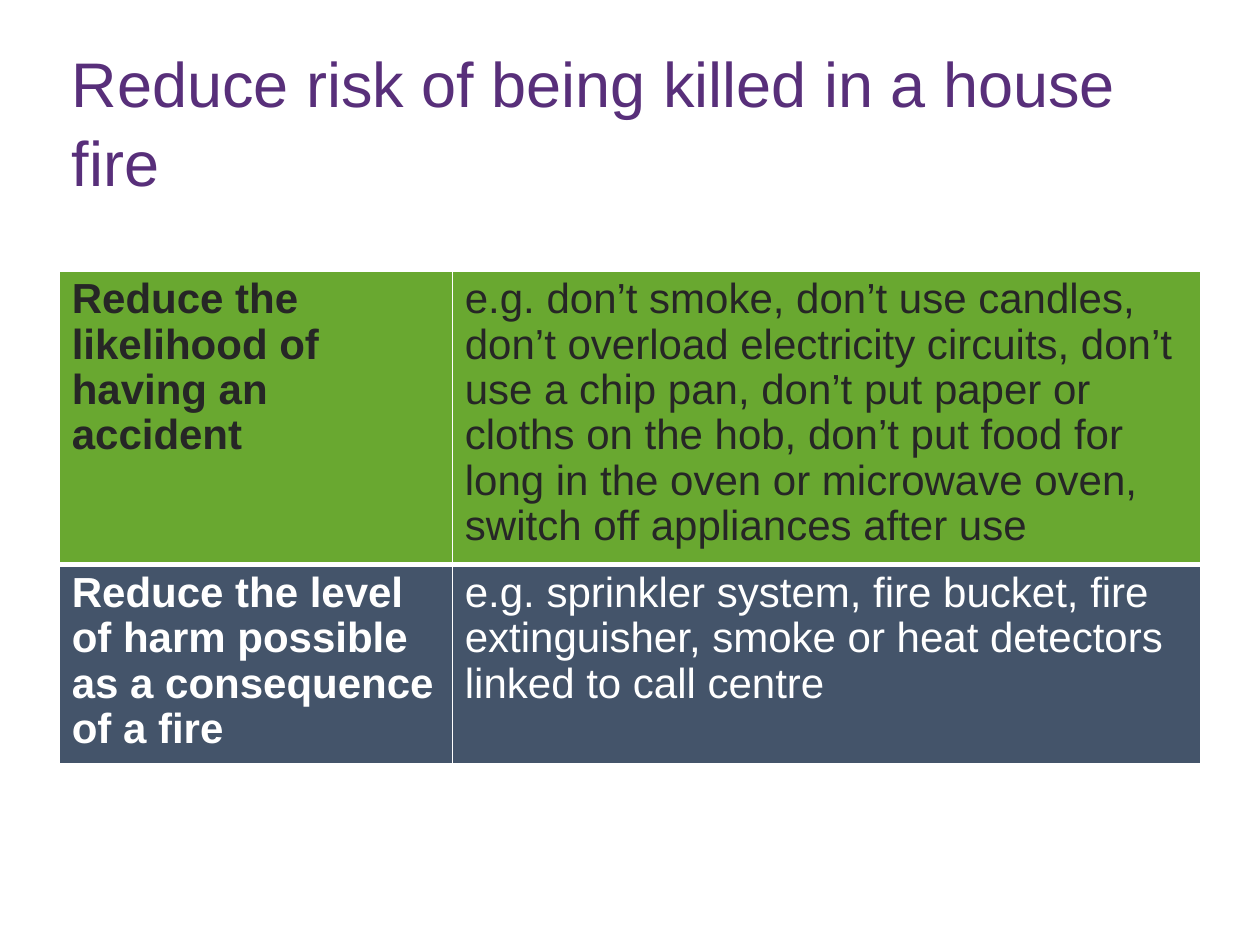
import pptx
import pptx.dml.color
import pptx.enum.text
import pptx.oxml.ns
import pptx.util
from lxml import etree

Inches, Pt = pptx.util.Inches, pptx.util.Pt
Color = pptx.dml.color.RGBColor.from_string

# Content: label, examples, fill, text colour, row height
TITLE = "Reduce risk of being killed in a house fire"
ROWS = [
    ("Reduce the likelihood of having an accident",
     "e.g. don’t smoke, don’t use candles, don’t overload electricity circuits, "
     "don’t use a chip pan, don’t put paper or cloths on the hob, don’t put food "
     "for long in the oven or microwave oven, switch off appliances after use",
     "green", "dark", 2.33),
    ("Reduce the level of harm possible as a consequence of a fire",
     "e.g. sprinkler system, fire bucket, fire extinguisher, smoke or heat "
     "detectors linked to call centre",
     "slate", "white", 1.58),
]
COLUMNS = [3.12, 5.94]
LEFT, WIDTH = 0.47, sum(COLUMNS)

THEME = {
    "font": "Arial", "title_size": 36, "cell_size": 24,
    "title_spacing": 1.05, "cell_spacing": 0.97,
    "purple": "582F7A", "green": "69A830", "slate": "44546A",
    "dark": "262626", "white": "FFFFFF",
}


def style(para, size, color, spacing, bold=False):
    para.line_spacing = spacing
    para.font.name = THEME["font"]
    para.font.size = Pt(size)
    para.font.bold = bold
    para.font.color.rgb = Color(THEME[color])


def add_borders(cell, widths):
    """Draw white cell borders; they must precede the fill in tcPr."""
    properties = cell._tc.get_or_add_tcPr()
    for index, (side, width) in enumerate(widths.items()):
        line = etree.Element(pptx.oxml.ns.qn(f"a:ln{side}"), w=str(Pt(width)))
        fill = etree.SubElement(line, pptx.oxml.ns.qn("a:solidFill"))
        etree.SubElement(fill, pptx.oxml.ns.qn("a:srgbClr"), val=THEME["white"])
        properties.insert(index, line)


deck = pptx.Presentation()
deck.slide_width, deck.slide_height = Inches(10), Inches(7.5)
page = deck.slides.add_slide(deck.slide_layouts[5])

# Title
title = page.shapes.title
title.left, title.top = Inches(LEFT), Inches(0.4)
title.width, title.height = Inches(WIDTH), Inches(1.1)
title.text_frame.text = TITLE
title.text_frame.vertical_anchor = pptx.enum.text.MSO_ANCHOR.MIDDLE
heading = title.text_frame.paragraphs[0]
heading.alignment = pptx.enum.text.PP_ALIGN.LEFT
style(heading, THEME["title_size"], "purple", THEME["title_spacing"])

# Table
table = page.shapes.add_table(
    len(ROWS), len(COLUMNS), Inches(LEFT), Inches(2.15),
    Inches(WIDTH), Inches(sum(row[-1] for row in ROWS))).table
table.first_row = table.horz_banding = False
for column, width in zip(table.columns, COLUMNS):
    column.width = Inches(width)

for row_index, (label, examples, fill, color, height) in enumerate(ROWS):
    table.rows[row_index].height = Inches(height)
    top, bottom = (1, 3) if row_index == 0 else (3, 1)
    for column_index, text in enumerate((label, examples)):
        cell = table.cell(row_index, column_index)
        cell.text = text
        cell.fill.solid()
        cell.fill.fore_color.rgb = Color(THEME[fill])
        add_borders(cell, {"L": 1, "R": 1, "T": top, "B": bottom})
        style(cell.text_frame.paragraphs[0], THEME["cell_size"], color,
              THEME["cell_spacing"], bold=column_index == 0)

deck.save("out.pptx")
